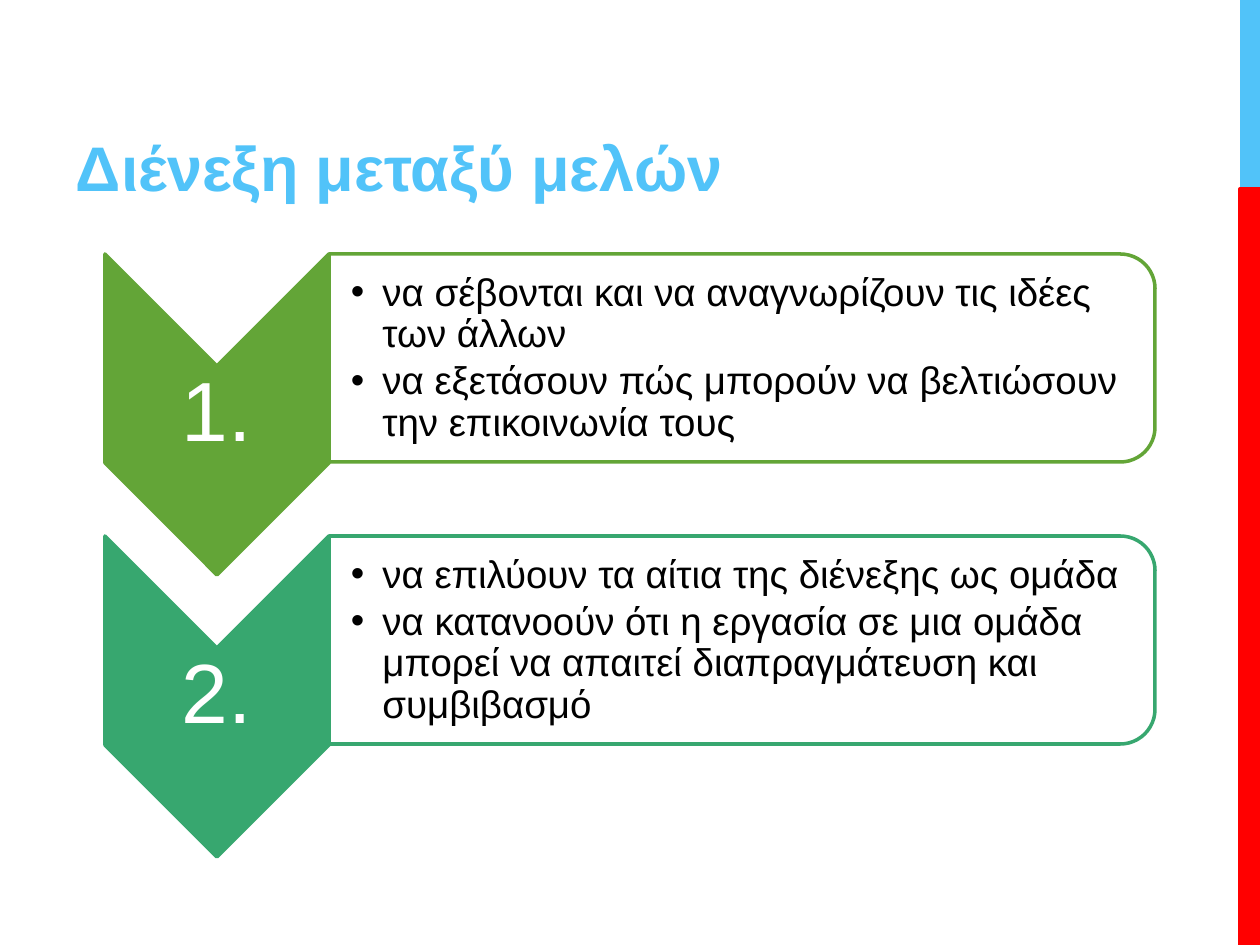
from lxml.etree import SubElement
from pptx import Presentation
from pptx.dml.color import RGBColor
from pptx.enum.shapes import MSO_SHAPE
from pptx.enum.text import MSO_ANCHOR, PP_ALIGN
from pptx.oxml.ns import qn
from pptx.util import Emu, Pt

SKY = RGBColor(0x51, 0xC3, 0xF9)
RED = RGBColor(0xFF, 0x00, 0x00)
GREEN = RGBColor(0x63, 0xA5, 0x37)
TEAL = RGBColor(0x37, 0xA7, 0x6F)
WHITE = RGBColor(0xFF, 0xFF, 0xFF)
BLACK = RGBColor(0x00, 0x00, 0x00)
FONT = "Arial"
STEP_PITCH = 282

STEPS = [
    ("1.", GREEN, [
        "να σέβονται και να αναγνωρίζουν τις ιδέες των άλλων",
        "να εξετάσουν πώς μπορούν να βελτιώσουν την επικοινωνία τους",
    ]),
    ("2.", TEAL, [
        "να επιλύουν τα αίτια της διένεξης ως ομάδα",
        "να κατανοούν ότι η εργασία σε μια ομάδα μπορεί να απαιτεί "
        "διαπραγμάτευση και συμβιβασμό",
    ]),
]


def px(length):
    return Emu(round(length * 914400 / 126))


def add_run(paragraph, text, size, color, bold=False):
    run = paragraph.add_run()
    run.text = text
    run.font.name = FONT
    run.font.size = Pt(size)
    run.font.bold = bold
    run.font.color.rgb = color


def set_frame(frame, anchor, left, top, right, bottom):
    frame.word_wrap = True
    frame.vertical_anchor = anchor
    frame.margin_left, frame.margin_top = px(left), px(top)
    frame.margin_right, frame.margin_bottom = px(right), px(bottom)


def add_filled_shape(slide, kind, box, fill, line=None, line_width=2):
    shape = slide.shapes.add_shape(kind, *map(px, box))
    shape.shadow.inherit = False
    shape.fill.solid()
    shape.fill.fore_color.rgb = fill
    if line is None:
        shape.line.fill.background()
    else:
        shape.line.color.rgb = line
        shape.line.width = Pt(line_width)
    return shape


def add_turned_shape(slide, kind, box, fill, line):
    left, top, width, height = box
    shift = (width - height) / 2
    turned_box = (left + shift, top - shift, height, width)
    shape = add_filled_shape(slide, kind, turned_box, fill, line)
    shape.rotation = 90
    return shape


def set_opacity(shape, percent):
    color = shape.fill._xPr.find(qn("a:solidFill"))[0]
    SubElement(color, qn("a:alpha"), val=str(percent * 1000))


def add_bullet(paragraph):
    properties = paragraph._p.get_or_add_pPr()
    properties.set("marL", "228600")
    properties.set("indent", "-228600")
    bullet_color = SubElement(properties, qn("a:buClr"))
    SubElement(bullet_color, qn("a:srgbClr"), val=str(BLACK))
    SubElement(properties, qn("a:buFont"), typeface=FONT)
    SubElement(properties, qn("a:buChar"), char="•")


def add_side_bar(slide, left, top, width, height):
    split = height // 5
    add_filled_shape(slide, MSO_SHAPE.RECTANGLE, (left, top, width, split), SKY)
    add_filled_shape(slide, MSO_SHAPE.RECTANGLE,
                     (left, top + split, width, height - split), RED, RED, 2.25)


def add_title(slide, left, top, width, height):
    title = slide.shapes.title
    title.left, title.top = px(left), px(top)
    title.width, title.height = px(width), px(height)
    set_frame(title.text_frame, MSO_ANCHOR.BOTTOM, 13, 6, 13, 6)
    paragraph = title.text_frame.paragraphs[0]
    paragraph.alignment = PP_ALIGN.LEFT
    add_run(paragraph, "Διένεξη μεταξύ μελών", 36, SKY, True)


def add_step(slide, left, top, number, color, points):
    add_turned_shape(slide, MSO_SHAPE.CHEVRON, (left, top, 224, 321), color, color)
    number_box = slide.shapes.add_textbox(px(left), px(top + 112), px(224), px(96))
    set_frame(number_box.text_frame, MSO_ANCHOR.MIDDLE, 4, 4, 4, 4)
    paragraph = number_box.text_frame.paragraphs[0]
    paragraph.alignment = PP_ALIGN.CENTER
    paragraph.line_spacing = 0.9
    add_run(paragraph, number, 48, WHITE)

    panel = add_turned_shape(slide, MSO_SHAPE.ROUND_2_SAME_RECTANGLE,
                             (left + 224, top, 826, 208), WHITE, color)
    set_opacity(panel, 90)
    points_box = slide.shapes.add_textbox(px(left + 225), px(top + 11), px(815), px(188))
    frame = points_box.text_frame
    set_frame(frame, MSO_ANCHOR.MIDDLE, 21, 2, 2, 2)
    for index, point in enumerate(points):
        paragraph = frame.add_paragraph() if index else frame.paragraphs[0]
        paragraph.level = 1
        add_bullet(paragraph)
        paragraph.line_spacing = 0.9
        paragraph.space_after = Pt(3)
        add_run(paragraph, point, 22, BLACK)


def main():
    presentation = Presentation()
    presentation.slide_width, presentation.slide_height = px(1260), px(945)
    slide = presentation.slides.add_slide(presentation.slide_layouts[5])
    add_side_bar(slide, 1240, 0, 20, 945)
    add_title(slide, 63, 21, 885, 189)
    for index, step in enumerate(STEPS):
        add_step(slide, 105, 254 + index * STEP_PITCH, *step)
    presentation.save("out.pptx")


if __name__ == "__main__":
    main()
